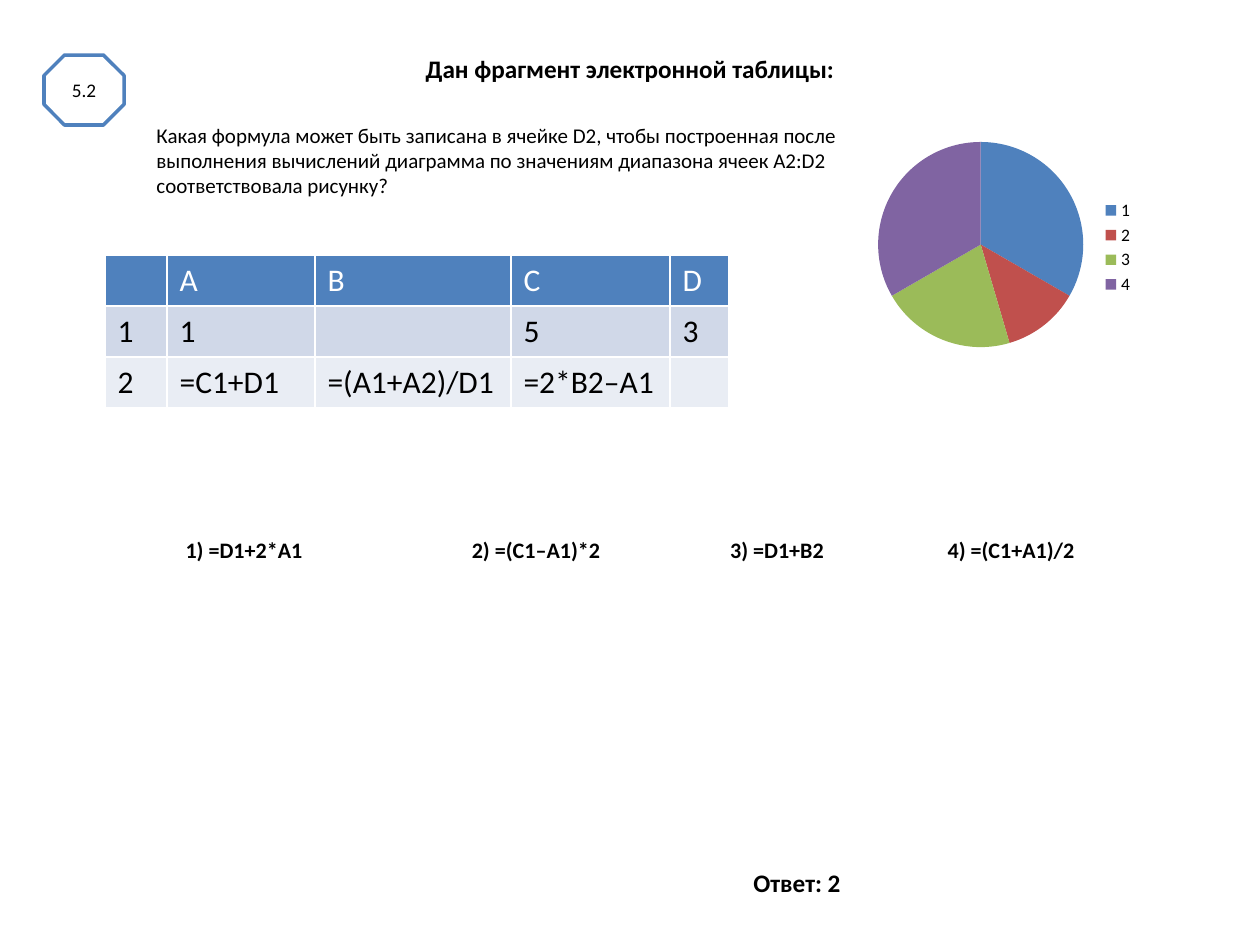
from dataclasses import dataclass

from lxml import etree
from pptx import Presentation
from pptx import util as u
from pptx.chart.data import CategoryChartData
from pptx.dml.color import RGBColor
from pptx.enum import chart as charts, shapes, text
from pptx.oxml import parse_xml
from pptx.oxml.ns import nsdecls, qn

PX_PER_INCH = 126


def px(value):
    return u.Emu(round(value * 914400 / PX_PER_INCH))


@dataclass(frozen=True)
class Theme:
    font: str = "Calibri"
    ink: str = "000000"
    white: str = "FFFFFF"
    accent: str = "4F81BD"
    bands: tuple = ("D0D8E8", "E9EDF4")
    slices: tuple = ("4F81BD", "C0504D", "9BBB59", "8064A2")
    title_size: float = 14.4
    option_size: float = 12.6
    body_size: float = 12
    badge_size: float = 11
    legend_size: float = 10
    table_size: float = 18


class SlideBuilder:
    def __init__(self, slide, theme):
        self.slide = slide
        self.theme = theme

    def style(self, frame, size, color, bold=False, align=None):
        for paragraph in frame.paragraphs:
            paragraph.alignment = align
            for run in paragraph.runs:
                run.font.name = self.theme.font
                run.font.size = u.Pt(size)
                run.font.bold = bold
                run.font.color.rgb = RGBColor.from_string(color)

    def textbox(self, box, words, size):
        shape = self.slide.shapes.add_textbox(*map(px, box))
        frame = shape.text_frame
        frame.word_wrap = True
        frame.text = words
        self.style(frame, size, self.theme.ink)

    def heading(self, center_x, center_y, width, words, size):
        """Bold line of text centred on a point."""
        height = 40
        box = (center_x - width / 2, center_y - height / 2, width, height)
        frame = self.slide.shapes.add_textbox(*map(px, box)).text_frame
        frame.word_wrap = True
        frame.vertical_anchor = text.MSO_ANCHOR.MIDDLE
        frame.text = words
        self.style(frame, size, self.theme.ink, True, text.PP_ALIGN.CENTER)

    def badge(self, box, words):
        shape = self.slide.shapes.add_shape(shapes.MSO_SHAPE.OCTAGON, *map(px, box))
        shape.shadow.inherit = False
        shape.fill.solid()
        shape.fill.fore_color.rgb = RGBColor.from_string(self.theme.white)
        shape.line.color.rgb = RGBColor.from_string(self.theme.accent)
        shape.line.width = u.Pt(2)
        frame = shape.text_frame
        frame.vertical_anchor = text.MSO_ANCHOR.MIDDLE
        frame.text = words
        self.style(frame, self.theme.badge_size, self.theme.ink,
                   align=text.PP_ALIGN.CENTER)

    def cell_borders(self, cell):
        properties = cell._tc.get_or_add_tcPr()
        for index, side in enumerate(("lnL", "lnR", "lnT", "lnB")):
            line = parse_xml(
                f'<a:{side} {nsdecls("a")} w="{u.Pt(1)}"><a:solidFill>'
                f'<a:srgbClr val="{self.theme.white}"/></a:solidFill></a:{side}>')
            properties.insert(index, line)

    def table(self, left, top, widths, row_height, rows):
        box = (left, top, sum(widths), row_height * len(rows))
        table = self.slide.shapes.add_table(
            len(rows), len(widths), *map(px, box)).table
        for column, width in zip(table.columns, widths):
            column.width = px(width)
        for r, row in enumerate(rows):
            table.rows[r].height = px(row_height)
            fill = self.theme.bands[(r - 1) % 2] if r else self.theme.accent
            color = self.theme.ink if r else self.theme.white
            for c, words in enumerate(row):
                cell = table.cell(r, c)
                cell.text = words
                cell.fill.solid()
                cell.fill.fore_color.rgb = RGBColor.from_string(fill)
                self.style(cell.text_frame, self.theme.table_size, color)
                self.cell_borders(cell)

    def pie(self, box, values, plot):
        """Pie with a legend; plot is the pie's box in fractions of the chart."""
        data = CategoryChartData()
        data.categories = [str(i + 1) for i in range(len(values))]
        data.add_series("Series 1", values)
        chart = self.slide.shapes.add_chart(
            charts.XL_CHART_TYPE.PIE, *map(px, box), data).chart
        chart.has_title = False
        chart.font.name = self.theme.font
        chart.font.size = u.Pt(self.theme.legend_size)
        chart.font.color.rgb = RGBColor.from_string(self.theme.ink)
        chart.has_legend = True
        chart.legend.position = charts.XL_LEGEND_POSITION.RIGHT
        chart.legend.include_in_layout = False
        pie = chart.plots[0]
        pie.vary_by_categories = True
        for index, color in enumerate(self.theme.slices):
            fill = pie.series[0].points[index].format.fill
            fill.solid()
            fill.fore_color.rgb = RGBColor.from_string(color)

        # Fixed plot area
        area = chart._chartSpace.chart.plotArea
        for old in area.findall(qn("c:layout")):
            area.remove(old)
        layout = etree.Element(qn("c:layout"))
        manual = etree.SubElement(layout, qn("c:manualLayout"))
        settings = [("layoutTarget", "inner"), ("xMode", "edge"), ("yMode", "edge")]
        for tag, value in settings + list(zip("xywh", plot)):
            etree.SubElement(manual, qn(f"c:{tag}")).set("val", str(value))
        area.insert(0, layout)


def main():
    presentation = Presentation()
    presentation.slide_width = px(1260)
    presentation.slide_height = px(945)
    theme = Theme()
    builder = SlideBuilder(
        presentation.slides.add_slide(presentation.slide_layouts[6]), theme)

    # Title and question
    builder.heading(630, 68, 600, "Дан фрагмент электронной таблицы:", theme.title_size)
    builder.badge((44, 55, 80, 70), "5.2")
    builder.textbox(
        (144, 116, 714, 89),
        "Какая формула может быть записана в ячейке D2, чтобы построенная "
        "после выполнения вычислений диаграмма по значениям диапазона ячеек "
        "A2:D2 соответствовала рисунку?", theme.body_size)

    # Spreadsheet and its chart
    builder.table(105, 255, (62, 148, 196, 159, 59), 51, [
        ("", "A", "B", "C", "D"),
        ("1", "1", "", "5", "3"),
        ("2", "=C1+D1", "=(A1+A2)/D1", "=2*B2–A1", ""),
    ])
    builder.pie((861, 105, 285, 285), (33, 12, 21, 33), (0.06, 0.13, 0.72, 0.72))

    # Answer options
    options = {244: "=D1+2*A1", 536: "=(C1–A1)*2", 777: "=D1+B2", 1011: "=(C1+A1)/2"}
    for number, (center, formula) in enumerate(options.items(), 1):
        builder.heading(center, 550, 200, f"{number}) {formula}", theme.option_size)

    # Answer
    builder.heading(797, 882, 200, "Ответ: 2", theme.title_size)

    presentation.save("out.pptx")


if __name__ == "__main__":
    main()
